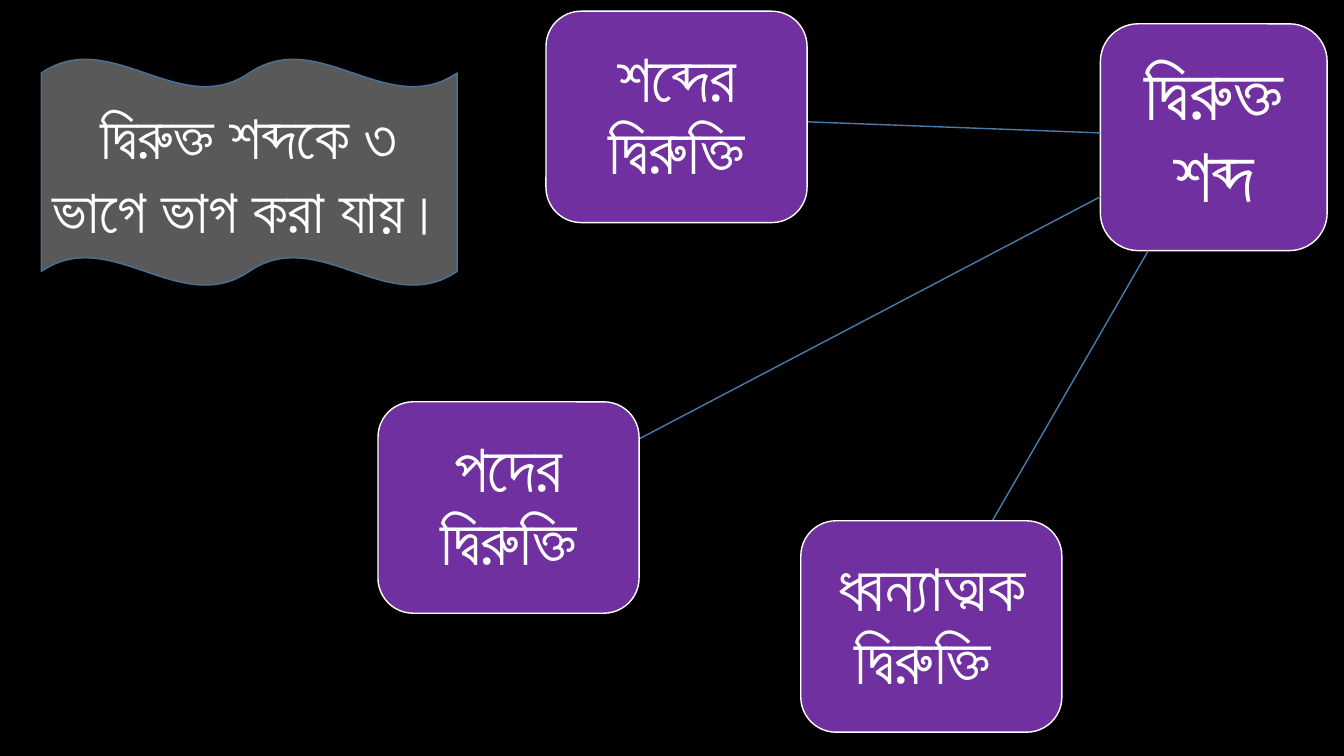
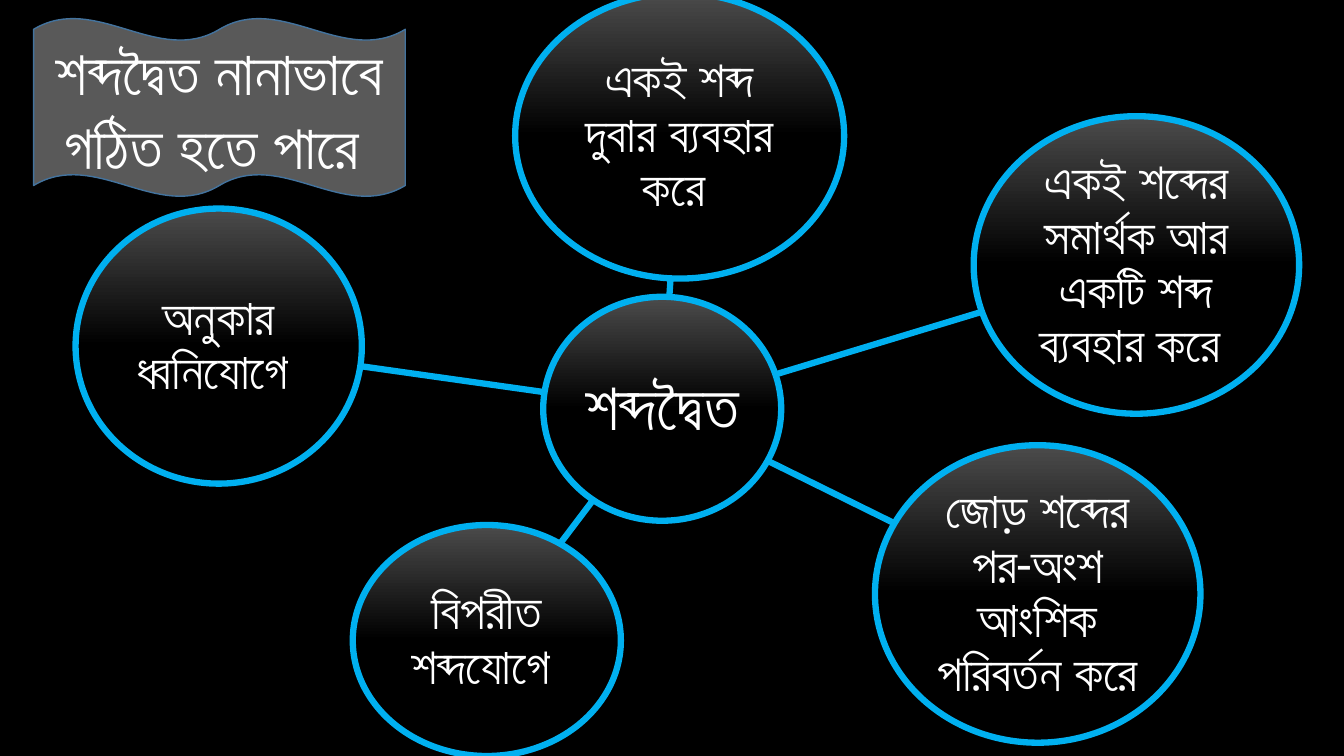
from dataclasses import dataclass
from math import hypot

from lxml.etree import SubElement
from pptx import Presentation
from pptx.dml.color import RGBColor
from pptx.enum.shapes import MSO_CONNECTOR, MSO_SHAPE
from pptx.enum.text import MSO_ANCHOR, PP_ALIGN
from pptx.oxml.ns import qn
from pptx.shapes.autoshape import Shape
from pptx.slide import Slide
from pptx.util import Pt

FONT = "Roboto"
COLORS = {
    "back": "000000",
    "text": "FFFFFF",
    "box": "7030A0",
    "link": "497CAB",
    "wave": "595959",
    "rim": "43739E",
    "glow": "4B4B4B",
    "ring": "00B0F0",
}


@dataclass(frozen=True)
class Node:
    text: str
    left: float
    top: float
    width: float
    height: float
    size: float

    @property
    def center(self) -> tuple[float, float]:
        return self.left + self.width / 2, self.top + self.height / 2


@dataclass(frozen=True)
class Style:
    form: MSO_SHAPE
    line: str
    weight: float
    fill: str
    fade: bool = False
    link: str = ""
    round: bool = False
    inset: float = 0.0
    spacing: float = 1.0


BOX = Style(MSO_SHAPE.ROUNDED_RECTANGLE, "text", 1, "box",
            link="link", inset=9.6, spacing=0.9)
RING = Style(MSO_SHAPE.OVAL, "ring", 4.5, "glow", fade=True,
             link="ring", round=True, inset=2, spacing=0.9)
WAVE = Style(MSO_SHAPE.DOUBLE_WAVE, "rim", 1, "wave", inset=7.2)


@dataclass(frozen=True)
class Page:
    style: Style
    hub: Node
    nodes: tuple[Node, ...]
    title: Node


BOX_SIZE = (186.5, 151, 48)
BIG_RING = (232.5, 212.5, 36)

PAGES = (
    Page(
        BOX,
        Node("দ্বিরুক্ত শব্দ", 786, 17, 162, 162, 54),
        (
            Node("শব্দের দ্বিরুক্তি", 390, 8, *BOX_SIZE),
            Node("পদের দ্বিরুক্তি", 270, 287, *BOX_SIZE),
            Node("ধ্বন্যাত্মক দ্বিরুক্তি ", 572, 372, *BOX_SIZE),
        ),
        Node("দ্বিরুক্ত শব্দকে ৩ ভাগে ভাগ করা যায়। ", 29.5, 42, 297, 162, 44),
    ),
    Page(
        RING,
        Node("শব্দদ্বৈত", 388, 212, 170, 160, 47),
        (
            Node("একই শব্দ দুবার ব্যবহার করে ", 368, -5, 235, 204, 36),
            Node("একই শব্দের সমার্থক আর একটি শব্দ ব্যবহার করে ",
                 695.5, 83, *BIG_RING),
            Node("জোড় শব্দের পর-অংশ আংশিক পরিবর্তন করে",
                 625, 318, *BIG_RING),
            Node("বিপরীত শব্দযোগে ", 252, 375, 191.5, 165, 36),
            Node("অনুকার ধ্বনিযোগে ", 54, 149, 204.5, 196.5, 36),
        ),
        Node("শব্দদ্বৈত নানাভাবে গঠিত হতে পারে ", 24, 13, 265.5, 127.5, 44),
    ),
)


def color(name: str) -> RGBColor:
    return RGBColor.from_string(COLORS[name])


def write(shape: Shape, text: str, *, size: float, inset: float,
          spacing: float = 1.0, tone: str = "text") -> None:
    frame = shape.text_frame
    frame.word_wrap = True
    frame.vertical_anchor = MSO_ANCHOR.MIDDLE
    frame.margin_left = frame.margin_right = Pt(inset)
    frame.margin_top = frame.margin_bottom = Pt(min(inset, 3.6) if spacing == 1 else inset)
    para = frame.paragraphs[0]
    para.alignment = PP_ALIGN.CENTER
    para.line_spacing = spacing
    run = para.add_run()
    run.text = text
    run.font.name = FONT
    run.font.size = Pt(size)
    run.font.color.rgb = color(tone)


def paint(shape: Shape, style: Style) -> None:
    shape.shadow.inherit = False
    shape.line.color.rgb = color(style.line)
    shape.line.width = Pt(style.weight)
    if not style.fade:
        shape.fill.solid()
        shape.fill.fore_color.rgb = color(style.fill)
        return
    shape.fill.gradient()
    shape.fill.gradient_angle = 270
    stops = zip(shape.fill.gradient_stops, (style.fill, "back"), (0, 0.5))
    for stop, tone, place in stops:
        stop.color.rgb = color(tone)
        stop.position = place


def draw(slide: Slide, node: Node, style: Style) -> None:
    shape = slide.shapes.add_shape(
        style.form, Pt(node.left), Pt(node.top), Pt(node.width), Pt(node.height))
    paint(shape, style)
    write(shape, node.text, size=node.size, inset=style.inset,
          spacing=style.spacing)


def edge(node: Node, goal: Node, round: bool) -> tuple[float, float]:
    x, y = node.center
    dx, dy = goal.center[0] - x, goal.center[1] - y
    across, down = abs(dx) * 2 / node.width, abs(dy) * 2 / node.height
    reach = hypot(across, down) if round else max(across, down)
    return x + dx / reach, y + dy / reach


def join(slide: Slide, hub: Node, node: Node, style: Style) -> None:
    start = edge(hub, node, style.round)
    end = edge(node, hub, style.round)
    line = slide.shapes.add_connector(
        MSO_CONNECTOR.STRAIGHT, *(Pt(value) for value in start + end))
    line.line.color.rgb = color(style.link)
    line.line.width = Pt(style.weight)
    SubElement(line.element.spPr, qn("a:effectLst"))


def build(slide: Slide, page: Page) -> None:
    slide.background.fill.solid()
    slide.background.fill.fore_color.rgb = color("back")
    draw(slide, page.hub, page.style)
    for node in page.nodes:
        join(slide, page.hub, node, page.style)
        draw(slide, node, page.style)
    draw(slide, page.title, WAVE)


def main() -> None:
    deck = Presentation()
    deck.slide_width, deck.slide_height = Pt(960), Pt(540)
    for page in PAGES:
        build(deck.slides.add_slide(deck.slide_layouts[6]), page)
    deck.save("out.pptx")


if __name__ == "__main__":
    main()
